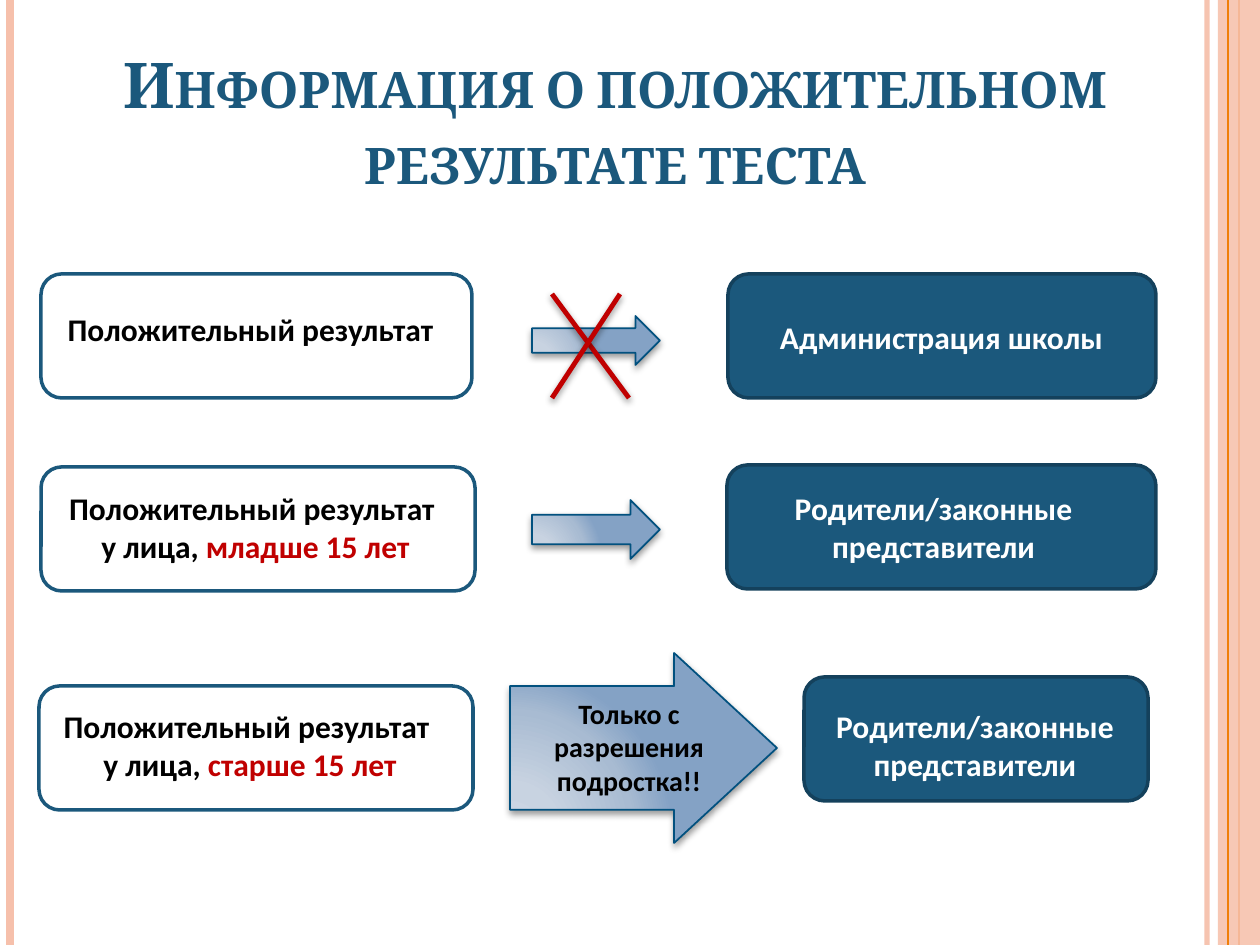
from lxml.etree import SubElement
from pptx import Presentation
from pptx.dml.color import RGBColor
from pptx.enum.shapes import MSO_CONNECTOR, MSO_SHAPE
from pptx.enum.text import MSO_ANCHOR, PP_ALIGN
from pptx.oxml import parse_xml
from pptx.oxml.ns import nsdecls, qn
from pptx.util import Emu, Pt

COLORS = {
    "rail": "F6C0AB", "accent": "F07F09", "blue": "1B587C", "dark": "14415C",
    "edge": "02517F", "red": "C00000", "black": "000000", "white": "FFFFFF",
}
ARROW_STOPS = [(0, "CDD7E4"), (30, "C8D3E1"), (75, "A8BBD2"), (100, "84A2C5")]


def px(length):
    return Emu(round(length * 914400 / 126))


def rgb(name):
    return RGBColor.from_string(COLORS[name])


class SlideBuilder:
    def __init__(self, slide, font="Calibri", size=18):
        self.slide, self.font, self.size = slide, font, size

    def set_alpha(self, parent, percent):
        for color in parent.iter(qn("a:srgbClr")):
            SubElement(color, qn("a:alpha")).set("val", str(percent * 1000))

    def add_shadow(self, effects, alpha, distance):
        effects.append(parse_xml(
            f'<a:outerShdw {nsdecls("a")} blurRad="{Pt(4)}" dist="{Pt(distance)}" '
            f'dir="5400000" rotWithShape="0"><a:srgbClr val="{COLORS["black"]}">'
            f'<a:alpha val="{alpha * 1000}"/></a:srgbClr></a:outerShdw>'))

    def line(self, start, end, color, width, alpha=100, shadow=False):
        line = self.slide.shapes.add_connector(
            MSO_CONNECTOR.STRAIGHT, *map(px, start + end))
        line.line.color.rgb = rgb(color)
        line.line.width = Pt(width)
        properties = line._element.spPr
        if alpha < 100:
            self.set_alpha(properties, alpha)
        effects = SubElement(properties, qn("a:effectLst"))
        if shadow:
            self.add_shadow(effects, 42, 1.6)

    def shape(self, kind, box, fill, edge=None, width=2):
        shape = self.slide.shapes.add_shape(kind, *map(px, box))
        shape.shadow.inherit = False
        shape.fill.solid()
        shape.fill.fore_color.rgb = rgb(fill)
        if edge:
            shape.line.color.rgb = rgb(edge)
            shape.line.width = Pt(width)
        else:
            shape.line.fill.background()
        return shape

    def band(self, box, color, alpha):
        band = self.shape(MSO_SHAPE.RECTANGLE, box, color)
        self.set_alpha(band._element.spPr, alpha)

    def card(self, box, fill, edge):
        self.shape(MSO_SHAPE.ROUNDED_RECTANGLE, box, fill, edge)

    def arrow(self, box, adjustments=()):
        arrow = self.shape(MSO_SHAPE.RIGHT_ARROW, box, "blue", "edge", 1)
        for index, value in enumerate(adjustments):
            arrow.adjustments[index] = value
        properties = arrow._element.spPr
        stops = "".join(f'<a:gs pos="{at * 1000}"><a:srgbClr val="{color}"/></a:gs>'
                        for at, color in ARROW_STOPS)
        gradient = parse_xml(
            f'<a:gradFill {nsdecls("a")} rotWithShape="1"><a:gsLst>{stops}</a:gsLst>'
            '<a:path path="circle"><a:fillToRect l="5000" t="100000" r="120000" '
            'b="10000"/></a:path></a:gradFill>')
        properties.replace(properties.find(qn("a:solidFill")), gradient)
        self.add_shadow(properties.find(qn("a:effectLst")), 40, 2)

    def text(self, box, paragraphs, color, size=None, font=None):
        """Each paragraph is a list of strings; a second string is set in red."""
        frame = self.slide.shapes.add_textbox(*map(px, box)).text_frame
        frame.word_wrap = True
        for index, parts in enumerate(paragraphs):
            paragraph = frame.add_paragraph() if index else frame.paragraphs[0]
            paragraph.alignment = PP_ALIGN.CENTER
            for part, run_color in zip(parts, (color, "red")):
                run = paragraph.add_run()
                run.text = part
                run.font.name = font or self.font
                run.font.size = Pt(size or self.size)
                run.font.bold = True
                run.font.color.rgb = rgb(run_color)
        return frame

    def title(self, box, words):
        frame = self.text(box, [[words]], "blue", 36, "Cambria")
        frame.vertical_anchor = MSO_ANCHOR.BOTTOM
        frame.paragraphs[0].runs[0].font._element.set("cap", "small")


def main():
    presentation = Presentation()
    presentation.slide_width, presentation.slide_height = px(1260), px(945)
    builder = SlideBuilder(
        presentation.slides.add_slide(presentation.slide_layouts[6]))

    # Side rails
    for x, color, width, alpha in [(1207, "rail", 3, 93), (10, "rail", 4.5, 100),
                                   (1239, "accent", 1.5, 100)]:
        builder.line((x, 0), (x, 945), color, width, alpha)
    builder.band((1218, 0, 42, 945), "rail", 87)
    builder.line((1228, 0), (1228, 945), "accent", 0.75)

    builder.title((44, 45, 1142, 158), "Информация о положительном результате теста")

    # Who was tested, and who is told
    for box in [(41, 274, 431, 124), (41, 467, 434, 124), (39, 686, 434, 124)]:
        builder.card(box, "white", "blue")
    for box in [(728, 274, 428, 124), (727, 465, 429, 124), (804, 677, 344, 124)]:
        builder.card(box, "blue", "dark")

    # Arrows between them
    builder.arrow((532, 316, 128, 49))
    builder.arrow((532, 500, 128, 59))
    builder.arrow((510, 653, 267, 190), (0.651, 0.541))

    # Cross over the forbidden route
    builder.line((552, 294), (629, 398), "red", 2.75, shadow=True)
    builder.line((620, 294), (552, 398), "red", 2.75, shadow=True)

    # Labels
    result = "Положительный результат"
    parents = [["Родители/законные представители"]]
    builder.text((44, 304, 413, 50), [[result]], "black")
    builder.text((728, 312, 427, 50), [["Администрация школы"]], "white")
    for box, age in [((54, 483, 403, 89), "младше 15 лет"),
                     ((19, 701, 462, 89), "старше 15 лет")]:
        builder.text(box, [[result + " "], ["у лица, ", age]], "black")
    for box in [(730, 483, 407, 89), (815, 701, 320, 89)]:
        builder.text(box, parents, "white")
    builder.text((501, 690, 256, 115), [["Только с разрешения подростка!!"]],
                 "black", 16)

    presentation.save("out.pptx")


if __name__ == "__main__":
    main()
